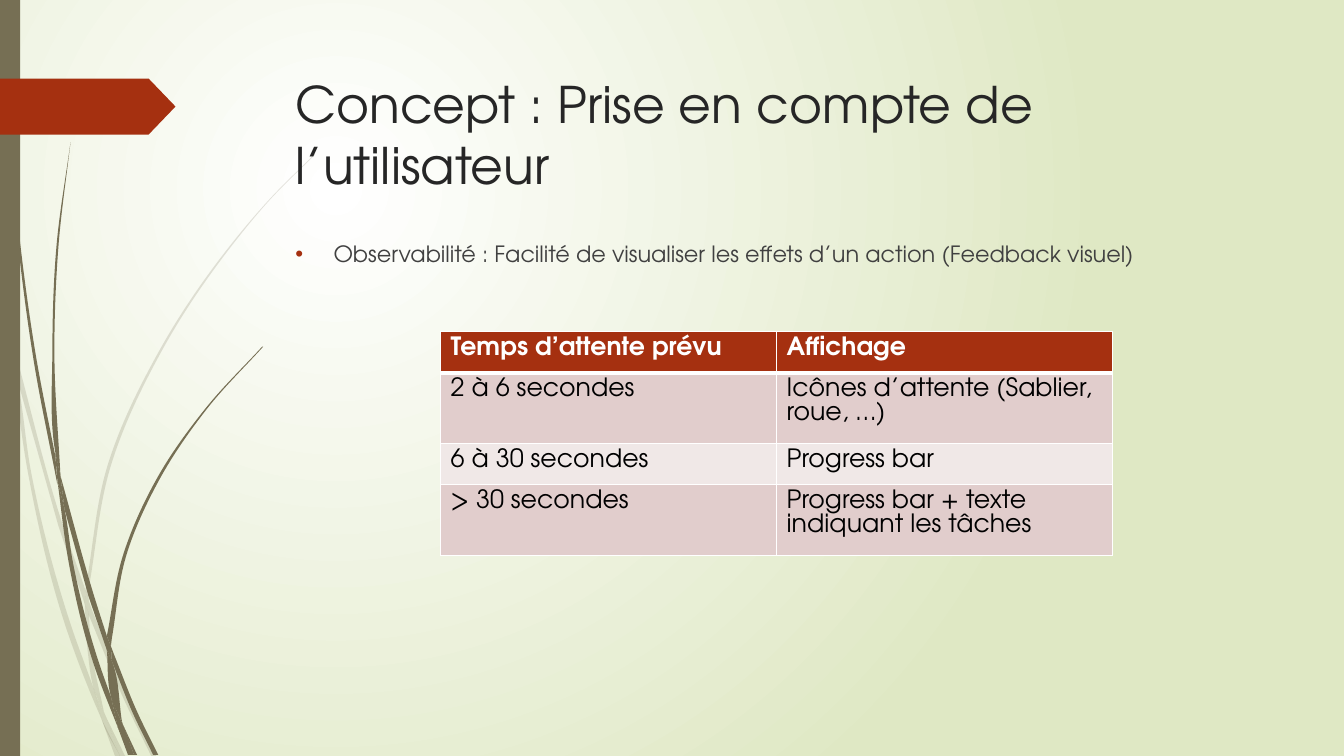
from dataclasses import dataclass
from itertools import pairwise
from math import dist

from lxml.etree import SubElement
from pptx import Presentation
from pptx.dml.color import RGBColor
from pptx.enum.shapes import MSO_SHAPE
from pptx.enum.text import MSO_ANCHOR, MSO_AUTO_SIZE, PP_ALIGN
from pptx.oxml.ns import qn
from pptx.util import Inches, Pt

FONT = "TeX Gyre Adventor"
WHITE = RGBColor(0xFF, 0xFF, 0xFF)
PALE_GREEN = RGBColor(0xDF, 0xE8, 0xC4)
OLIVE = RGBColor(0x76, 0x6F, 0x54)
BRICK = RGBColor(0xA5, 0x30, 0x10)
TITLE_GREY = RGBColor(0x26, 0x26, 0x26)
BODY_GREY = RGBColor(0x40, 0x40, 0x40)
BLACK = RGBColor(0, 0, 0)
BANDS = (RGBColor(0xE1, 0xCD, 0xCC), RGBColor(0xF0, 0xE8, 0xE7))

WAITING_TIMES = [
    ("Temps d’attente prévu", "Affichage"),
    ("2 à 6 secondes", "Icônes d’attente (Sablier, roue, …)"),
    ("6 à 30 secondes", "Progress bar"),
    ("> 30 secondes", "Progress bar + texte indiquant les tâches"),
]

# Each piece of grass has two edges, along one side and back along the other.
FAINT_GRASS = [
    ([(0.11, 3.5), (0.09, 3.22), (0, 2.82)], [(0, 2.99), (0.1, 3.44)]),
    ([(0.58, 5.22), (0.84, 5.99)], [(0.85, 5.86), (0.62, 5.2), (0.14, 3.45)], [(0.17, 3.76), (0.58, 5.22)]),
    ([(0.92, 6.07), (0.88, 5.96)], [(0.88, 6.1), (1.23, 6.94), (1.5, 7.5)], [(1.55, 7.5), (1.27, 6.92), (0.92, 6.07)]),
    ([(1.19, 7.5), (1.24, 7.5)], [(1.05, 7.11), (1.19, 7.5)]),
    ([(0.93, 6.83), (0.7, 6.19), (0.31, 4.69), (0.17, 3.76), (0.11, 3.5)],
     [(0.11, 3.5), (0.28, 4.7), (0.65, 6.21), (0.92, 6.93), (1.01, 7.14)], [(0.99, 7.07), (0.93, 6.83)]),
    ([(0.84, 5.99), (0.87, 6.46), (0.93, 6.83), (1.05, 7.11)], [(1.03, 7.06), (0.91, 6.46), (0.88, 6.08)]),
    ([(0.88, 5.84), (1.1, 4.62), (1.6, 3.49), (2.29, 2.45), (2.68, 1.98), (3.12, 1.54)],
     [(3.12, 1.53), (2.68, 1.97), (2.28, 2.44), (1.58, 3.48), (1.07, 4.61), (0.85, 5.84)], [(0.85, 5.86), (0.88, 5.96)]),
    ([(1.01, 7.14), (1.14, 7.5)], [(1.19, 7.5), (1.01, 7.14)]),
    ([(0.88, 6.08), (0.88, 5.96)], [(0.85, 5.86), (0.84, 5.99)]),
    ([(0.96, 6.92), (0.93, 6.83)], [(0.99, 7.07), (1.01, 7.14), (1.19, 7.5)], [(1.05, 7.11), (0.96, 6.92)]),
]
DARK_GRASS = [
    ([(0.07, 1.1), (0.17, 2.33), (0.33, 3.55), (0.57, 4.81)],
     [(0.55, 4.53), (0.36, 3.55), (0.19, 2.32), (0.08, 1.09), (0.04, 0)], [(0.03, 0), (0.07, 1.1)]),
    ([(0.88, 5.92), (1.06, 6.45)], [(1.06, 6.31), (0.93, 5.9), (0.6, 4.72)], [(0.64, 5.05), (0.88, 5.92)]),
    ([(1.13, 6.49), (1.1, 6.41)], [(1.11, 6.56), (1.32, 7.08), (1.52, 7.49)], [(1.57, 7.49), (1.36, 7.06), (1.13, 6.49)]),
    ([(1.1, 6.91), (0.98, 6.57), (0.72, 5.56), (0.64, 5.05), (0.57, 4.77)],
     [(0.57, 4.77), (0.68, 5.57), (0.93, 6.59), (1.17, 7.22)], [(1.16, 7.17), (1.1, 6.91)]),
    ([(0.6, 4.72), (0.54, 3.49), (0.58, 2.45), (0.7, 1.41)],
     [(0.7, 1.41), (0.56, 2.45), (0.52, 3.49), (0.55, 4.49), (0.6, 4.72)]),
    ([(1.33, 7.49), (1.36, 7.49)], [(1.22, 7.19), (1.33, 7.49)]),
    ([(0.57, 4.77), (0.64, 5.05)], [(0.6, 4.72), (0.55, 4.49)], [(0.55, 4.53), (0.57, 4.77)]),
    ([(1.11, 6.33), (1.25, 5.52), (1.58, 4.76), (2.05, 4.06), (2.61, 3.44)],
     [(2.6, 3.44), (2.04, 4.05), (1.56, 4.74), (1.22, 5.51), (1.06, 6.31)], [(1.1, 6.41), (1.11, 6.33)]),
    ([(1.17, 7.22), (1.27, 7.49)], [(1.31, 7.49), (1.17, 7.22)]),
    ([(1.06, 6.45), (1.1, 6.91), (1.22, 7.19)], [(1.21, 7.16), (1.11, 6.56), (1.06, 6.45)]),
    ([(1.06, 6.45), (1.11, 6.56)], [(1.1, 6.41), (1.06, 6.31)]),
    ([(1.16, 7.06), (1.1, 6.91)], [(1.17, 7.22), (1.3, 7.49)], [(1.33, 7.49), (1.22, 7.19), (1.16, 7.06)]),
]


@dataclass
class Box:
    left: float
    top: float
    width: float
    height: float

    def share(self, left, top, width, height):
        """Return the part of this box given as shares of its size."""
        return Box(self.left + left * self.width, self.top + top * self.height,
                   width * self.width, height * self.height)

    def emu(self):
        return [Inches(n) for n in (self.left, self.top, self.width, self.height)]


def apply_format(target, values):
    for name, value in values.items():
        setattr(target, name, value)


def write(paragraph, text, size, color, bold=False):
    run = paragraph.add_run()
    run.text = text
    apply_format(run.font, {"name": FONT, "size": Pt(size), "bold": bold})
    run.font.color.rgb = color


def paint(shape, color):
    shape.shadow.inherit = False
    shape.fill.solid()
    shape.fill.fore_color.rgb = color
    shape.line.fill.background()


def bezier_points(knots):
    """Return the first knot, then two control points and a knot for each span."""
    lengths = [dist(a, b) for a, b in pairwise(knots)]
    chords = [[(v - u) / n for u, v in zip(a, b)] for (a, b), n in zip(pairwise(knots), lengths)]
    inner = [[(u * n + v * m) / (m + n) for u, v in zip(a, b)]
             for (a, b), (m, n) in zip(pairwise(chords), pairwise(lengths))]
    slopes = [chords[0], *inner, chords[-1]]
    points = [knots[0]]
    for (a, b), (leave, arrive), n in zip(pairwise(knots), pairwise(slopes), lengths):
        points += [[p + s * n / 3 for p, s in zip(a, leave)],
                   [p - s * n / 3 for p, s in zip(b, arrive)], b]
    return points


def add_grass(slide, box, pieces, alpha=None):
    for edges in pieces:
        points = []
        for edge in edges:
            # A straight span joins one edge to the next.
            joint = [points[-1], edge[0]] if points else []
            points += joint + bezier_points(edge)
        outline = [(Inches(box.left + x), Inches(box.top + y)) for x, y in points]
        builder = slide.shapes.build_freeform(*outline[0])
        builder.add_line_segments(outline[1:], close=False)
        blade = builder.convert_to_shape()
        path = next(blade.element.iter(qn("a:path")))
        lines = path.findall(qn("a:lnTo"))
        for i in range(0, len(lines), 3):
            curve = SubElement(path, qn("a:cubicBezTo"))
            for line in lines[i:i + 3]:
                curve.append(line[0])
                path.remove(line)
        SubElement(path, qn("a:close"))
        paint(blade, OLIVE)
        if alpha:
            color = next(blade.element.spPr.iter(qn("a:srgbClr")))
            SubElement(color, qn("a:alpha"), val=str(alpha * 1000))


def add_background(slide):
    fill = slide.background.fill
    fill.gradient()
    for stop, color in zip(fill.gradient_stops, (WHITE, PALE_GREEN)):
        stop.color.rgb = color
    gradient = next(slide.element.iter(qn("a:gradFill")))
    gradient.remove(gradient.find(qn("a:lin")))
    circle = SubElement(gradient, qn("a:path"), path="circle")
    SubElement(circle, qn("a:fillToRect"), l="50000", t="50000", r="100000", b="100000")


def add_side_decoration(slide, box):
    add_grass(slide, box, FAINT_GRASS, alpha=20)
    add_grass(slide, box, DARK_GRASS)
    bar = slide.shapes.add_shape(MSO_SHAPE.RECTANGLE, *box.share(0, 0, 0.064, 1).emu())
    paint(bar, OLIVE)
    tag = slide.shapes.add_shape(MSO_SHAPE.PENTAGON, *box.share(0, 0.104, 0.558, 0.074).emu())
    tag.adjustments[0] = 0.48
    paint(tag, BRICK)


def place_title(slide, box, text):
    title = slide.shapes.title
    title.element.getparent().append(title.element)
    apply_format(title, dict(zip(("left", "top", "width", "height"), box.emu())))
    apply_format(title.text_frame, {"word_wrap": True, "auto_size": MSO_AUTO_SIZE.NONE,
                                    "vertical_anchor": MSO_ANCHOR.TOP})
    paragraph = title.text_frame.paragraphs[0]
    paragraph.alignment = PP_ALIGN.LEFT
    write(paragraph, text, 36, TITLE_GREY)


def add_bullet_text(slide, box, text):
    frame = slide.shapes.add_textbox(*box.emu()).text_frame
    frame.word_wrap = True
    paragraph = frame.paragraphs[0]
    paragraph.space_before = Pt(10)
    write(paragraph, text, 16, BODY_GREY)
    properties = paragraph._p.get_or_add_pPr()
    for name, value in {"marL": Inches(0.38), "indent": -Inches(0.38)}.items():
        properties.set(name, str(value))
    SubElement(SubElement(properties, qn("a:buClr")), qn("a:srgbClr"), val=str(BRICK))
    SubElement(properties, qn("a:buFont"), typeface="Arial")
    SubElement(properties, qn("a:buChar"), char="•")


def add_borders(cell, widths):
    for side, width in widths.items():
        line = SubElement(cell._tc.get_or_add_tcPr(), qn(f"a:ln{side}"), w=str(Pt(width)))
        SubElement(SubElement(line, qn("a:solidFill")), qn("a:srgbClr"), val=str(WHITE))


def add_waiting_table(slide, box, rows):
    table = slide.shapes.add_table(len(rows), len(rows[0]), *box.emu()).table
    for r, texts in enumerate(rows):
        header = r == 0
        for cell, text in zip(table.rows[r].cells, texts):
            add_borders(cell, {"L": 1, "R": 1, "T": 3 if r == 1 else 1, "B": 3 if header else 1})
            cell.fill.solid()
            cell.fill.fore_color.rgb = BRICK if header else BANDS[(r - 1) % 2]
            write(cell.text_frame.paragraphs[0], text, 18, WHITE if header else BLACK, bold=header)


def main():
    presentation = Presentation()
    page = Box(0, 0, 13.33, 7.5)
    presentation.slide_width, presentation.slide_height = page.emu()[2:]
    slide = presentation.slides.add_slide(presentation.slide_layouts[5])
    add_background(slide)
    add_side_decoration(slide, Box(0, 0, 3.12, page.height))
    content = Box(2.83, 0.68, 9.75, 5.78)
    place_title(slide, content.share(0, 0, 1, 0.24), "Concept : Prise en compte de l’utilisateur")
    add_bullet_text(slide, content.share(0, 0.286, 1, 0.714),
                    "Observabilité : Facilité de visualiser les effets d’un action (Feedback visuel)")
    add_waiting_table(slide, Box(4.37, 3.29, page.width / 2, 4 * 0.41), WAITING_TIMES)
    presentation.save("out.pptx")


if __name__ == "__main__":
    main()
